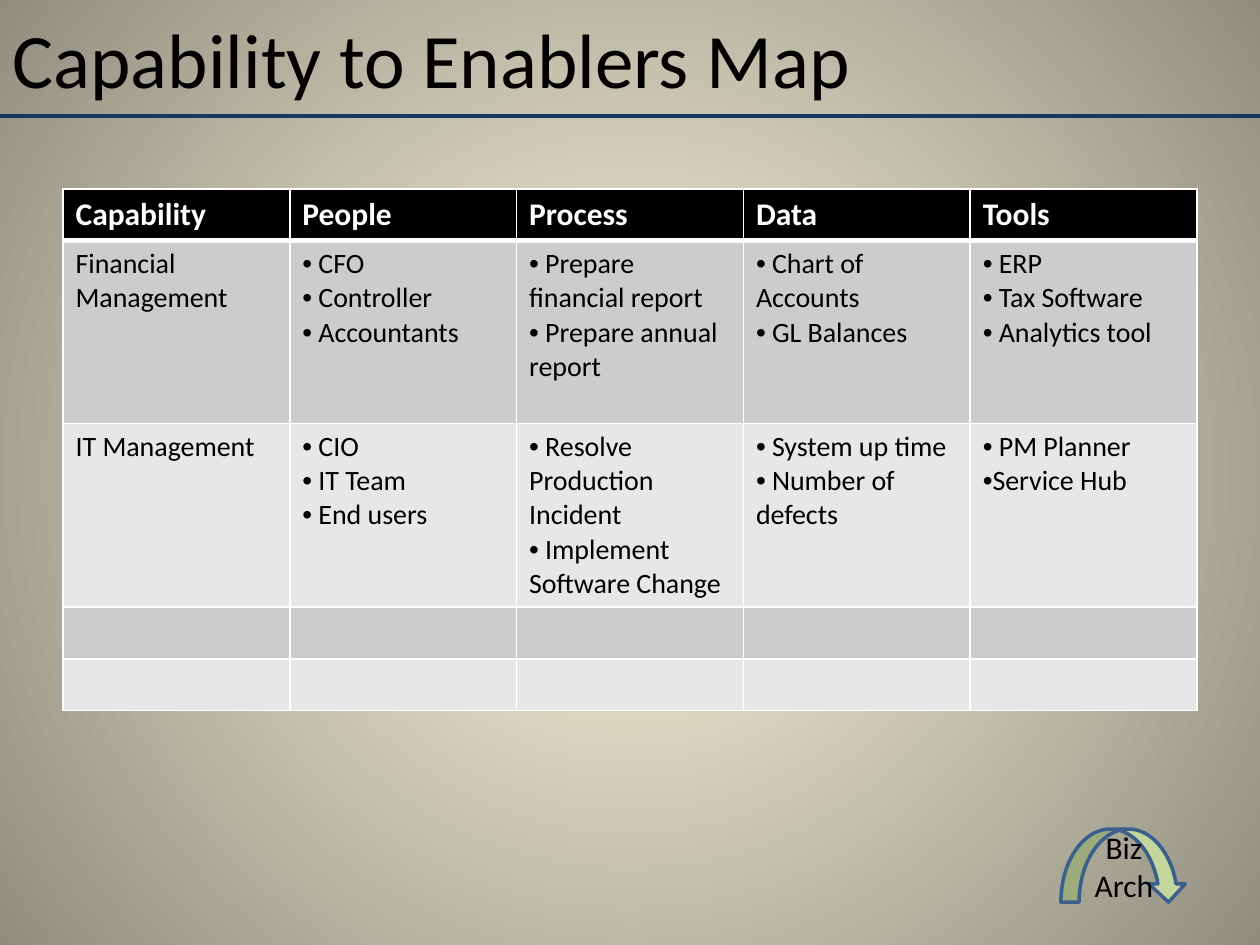
from lxml.etree import SubElement
from pptx import Presentation
from pptx.dml.color import RGBColor
from pptx.enum.shapes import MSO_CONNECTOR as Link, MSO_SHAPE as Shape
from pptx.enum.text import MSO_ANCHOR as Anchor, PP_ALIGN as Align
from pptx.oxml import parse_xml
from pptx.oxml.ns import nsdecls, qn
from pptx.util import Inches, Pt

BLACK = RGBColor(0x00, 0x00, 0x00)
WHITE = RGBColor(0xFF, 0xFF, 0xFF)
CREAM = RGBColor(0xFC, 0xF7, 0xDD)
STONE = RGBColor(0x91, 0x8E, 0x81)
NAVY = RGBColor(0x17, 0x37, 0x5E)
GREEN = RGBColor(0xC3, 0xD6, 0x9B)
BLUE = RGBColor(0x3A, 0x5F, 0x8C)
BANDS = [RGBColor(0xCC, 0xCC, 0xCC), RGBColor(0xE7, 0xE7, 0xE7)]

HEADS = ["Capability", "People", "Process", "Data", "Tools"]
ROWS = [
    ["Financial Management",
     [" CFO", " Controller", " Accountants"],
     [" Prepare financial report", " Prepare annual report"],
     [" Chart of Accounts", " GL Balances"],
     [" ERP", " Tax Software", " Analytics tool"]],
    ["IT Management",
     [" CIO", " IT Team", " End users"],
     [" Resolve Production Incident", " Implement Software Change"],
     [" System up time", " Number of defects"],
     [" PM Planner", "Service Hub"]],
    [""] * 5,
    [""] * 5,
]
SHORT, TALL = Inches(0.41), Inches(1.45)
HEIGHTS = [SHORT, TALL, TALL, SHORT, SHORT]


def write(para, text, size, color=BLACK, bold=False):
    run = para.add_run()
    run.text = text
    font = run.font
    font.name, font.size, font.bold = "Calibri", Pt(size), bold
    font.color.rgb = color


def edge(cell, top, bottom):
    """Draw white cell borders; top and bottom widths are in points."""
    props = cell._tc.get_or_add_tcPr()
    sides = [("L", 1), ("R", 1), ("T", top), ("B", bottom)]
    for i, (side, width) in enumerate(sides):
        props.insert(i, parse_xml(
            f'<a:ln{side} {nsdecls("a")} w="{Pt(width)}"><a:solidFill>'
            f'<a:srgbClr val="{WHITE}"/></a:solidFill></a:ln{side}>'))


prs = Presentation()
prs.slide_width, prs.slide_height = Inches(10), Inches(7.5)
W, H = prs.slide_width, prs.slide_height
slide = prs.slides.add_slide(prs.slide_layouts[5])
shapes = slide.shapes

# Background: light centre, dark rim
fill = slide.background.fill
fill.gradient()
for stop, color, pos in zip(fill.gradient_stops, (CREAM, STONE), (0, 1)):
    stop.color.rgb, stop.position = color, pos
grad = next(slide.element.iter(qn("a:gradFill")))
grad.remove(grad.find(qn("a:lin")))
ring = SubElement(grad, qn("a:path"), path="circle")
SubElement(ring, qn("a:fillToRect"), dict.fromkeys("ltrb", "50000"))

# Title and rule
bar = Inches(0.92)
title = shapes.title
title.left, title.top, title.width, title.height = 0, 0, int(W * 0.9), bar
title.text_frame.vertical_anchor = Anchor.MIDDLE
para = title.text_frame.paragraphs[0]
para.alignment = Align.LEFT
write(para, "Capability to Enablers Map", 44)

# Table
grid = shapes.add_table(len(HEIGHTS), len(HEADS), int(W * 0.05), int(H * 0.2),
                        int(W * 0.9), sum(HEIGHTS)).table
for row, height in zip(grid.rows, HEIGHTS):
    row.height = height
for r, row in enumerate([HEADS] + ROWS):
    for c, item in enumerate(row):
        cell = grid.cell(r, c)
        cell.fill.solid()
        cell.fill.fore_color.rgb = BANDS[(r - 1) % 2] if r else BLACK
        edge(cell, 3 if r == 1 else 1, 1 if r else 3)
        frame = cell.text_frame
        if r == 0:
            write(frame.paragraphs[0], item, 18, WHITE, True)
        elif isinstance(item, list):
            for i, text in enumerate(item):
                para = frame.add_paragraph() if i else frame.paragraphs[0]
                props = para._p.get_or_add_pPr()
                SubElement(props, qn("a:buFont"), typeface="Arial")
                SubElement(props, qn("a:buChar"), char="•")
                write(para, text, 16)
        elif item:
            write(frame.paragraphs[0], item, 16)

rule = shapes.add_connector(Link.STRAIGHT, 0, bar, W, bar)
rule.line.color.rgb, rule.line.width = NAVY, Pt(2.25)
SubElement(rule._element.spPr, qn("a:effectLst"))

# Corner badge
badge = shapes.add_shape(Shape.CURVED_DOWN_ARROW, Inches(8.42), Inches(6.58),
                         Inches(1), Inches(0.58))
badge.shadow.inherit = False
badge.fill.solid()
badge.fill.fore_color.rgb = GREEN
badge.line.color.rgb, badge.line.width = BLUE, Pt(2)
frame = badge.text_frame
frame.word_wrap, frame.vertical_anchor = True, Anchor.MIDDLE
para = frame.paragraphs[0]
para.alignment = Align.CENTER
write(para, "Biz Arch", 18)

prs.save("out.pptx")
